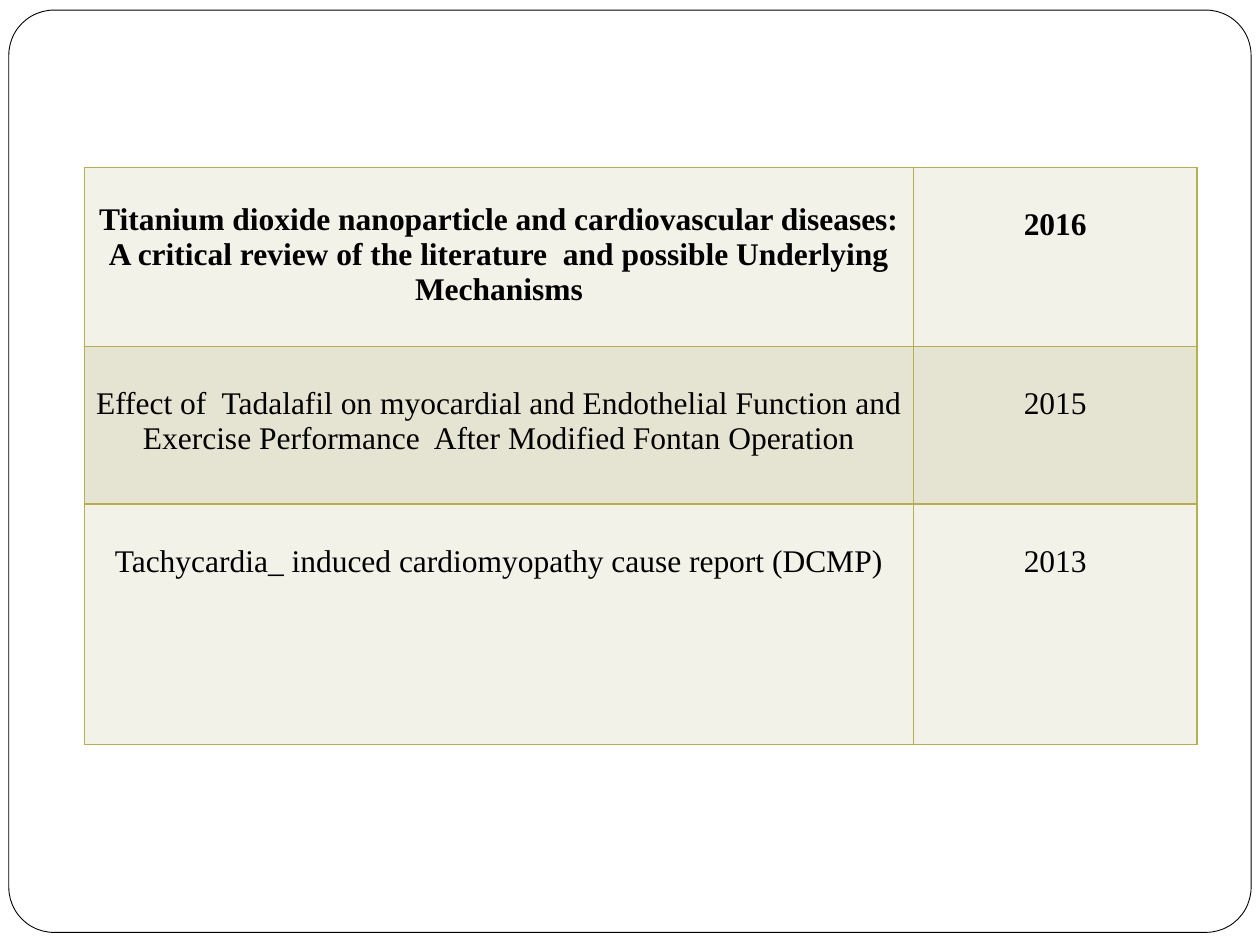
from dataclasses import dataclass

from lxml.etree import SubElement
from pptx import Presentation
from pptx.dml.color import RGBColor as RGB
from pptx.enum.shapes import MSO_SHAPE as SHAPE
from pptx.enum.text import PP_ALIGN as ALIGN
from pptx.oxml.ns import qn
from pptx.util import Inches, Pt


@dataclass(frozen=True)
class Theme:
    """Colours, font and sizes of the slide."""
    font: str = "Times New Roman"
    size: int = 18
    ink: str = "000000"
    paper: str = "FFFFFF"
    bands: tuple = ("F3F2E9", "E5E3D1")
    border: str = "B5AE53"
    border_width: float = 1
    frame_width: float = 0.5


THEME = Theme()
COLUMNS = (6.58, 2.25)
ROW_HEIGHTS = (1.42, 1.25, 1.91)
PUBLICATIONS = (
    ("Titanium dioxide nanoparticle and cardiovascular diseases: "
     "A critical review of the literature  and possible Underlying Mechanisms", "2016"),
    ("Effect of  Tadalafil on myocardial and Endothelial Function "
     "and Exercise Performance  After Modified Fontan Operation", "2015"),
    ("Tachycardia_ induced cardiomyopathy cause report (DCMP)", "2013"),
)


def write(tf, text, bold=False, align=ALIGN.CENTER):
    """Put one formatted paragraph into a text frame."""
    p = tf.paragraphs[0]
    p.alignment = align
    r = p.add_run()
    r.text = text
    r.font.name, r.font.size, r.font.bold = THEME.font, Pt(THEME.size), bold
    r.font.color.rgb = RGB.from_string(THEME.ink)


def set_borders(cell):
    """Draw the four edges of a table cell."""
    tc_pr = cell._tc.get_or_add_tcPr()
    for i, edge in enumerate(("lnL", "lnR", "lnT", "lnB")):
        ln = tc_pr.makeelement(qn(f"a:{edge}"), {"w": str(Pt(THEME.border_width))})
        fill = SubElement(ln, qn("a:solidFill"))
        SubElement(fill, qn("a:srgbClr"), val=THEME.border)
        tc_pr.insert(i, ln)


def add_frame(s, x, y, w, h):
    """Add the rounded page frame."""
    sp = s.shapes.add_shape(SHAPE.ROUNDED_RECTANGLE, Inches(x), Inches(y), Inches(w), Inches(h))
    sp.adjustments[0] = 0.049
    sp.shadow.inherit = False
    sp.fill.solid()
    sp.fill.fore_color.rgb = RGB.from_string(THEME.paper)
    sp.line.color.rgb = RGB.from_string(THEME.ink)
    sp.line.width = Pt(THEME.frame_width)


def add_publications(s, x, y, w, h):
    """Add the table of publications and their years."""
    table = s.shapes.add_table(len(ROW_HEIGHTS), len(COLUMNS),
                               Inches(x), Inches(y), Inches(w), Inches(h)).table
    table.first_row = table.horz_banding = False
    for column, width in zip(table.columns, COLUMNS):
        column.width = Inches(width)
    for i, (height, record) in enumerate(zip(ROW_HEIGHTS, PUBLICATIONS)):
        table.rows[i].height = Inches(height)
        for j, text in enumerate(record):
            cell = table.cell(i, j)
            cell.margin_left = cell.margin_right = Inches(0.07)
            cell.margin_top = Inches(0.28 if i == j == 0 else 0.32)
            cell.margin_bottom = 0
            cell.fill.solid()
            cell.fill.fore_color.rgb = RGB.from_string(THEME.bands[i % 2])
            set_borders(cell)
            write(cell.text_frame, text, bold=i == 0)


def main():
    """Build and save the slide."""
    prs = Presentation()
    prs.slide_width, prs.slide_height = Inches(10), Inches(7.5)
    s = prs.slides.add_slide(prs.slide_layouts[6])
    add_frame(s, 0.07, 0.08, 9.86, 7.32)
    add_publications(s, 0.67, 1.33, sum(COLUMNS), sum(ROW_HEIGHTS))
    prs.save("out.pptx")


if __name__ == "__main__":
    main()
